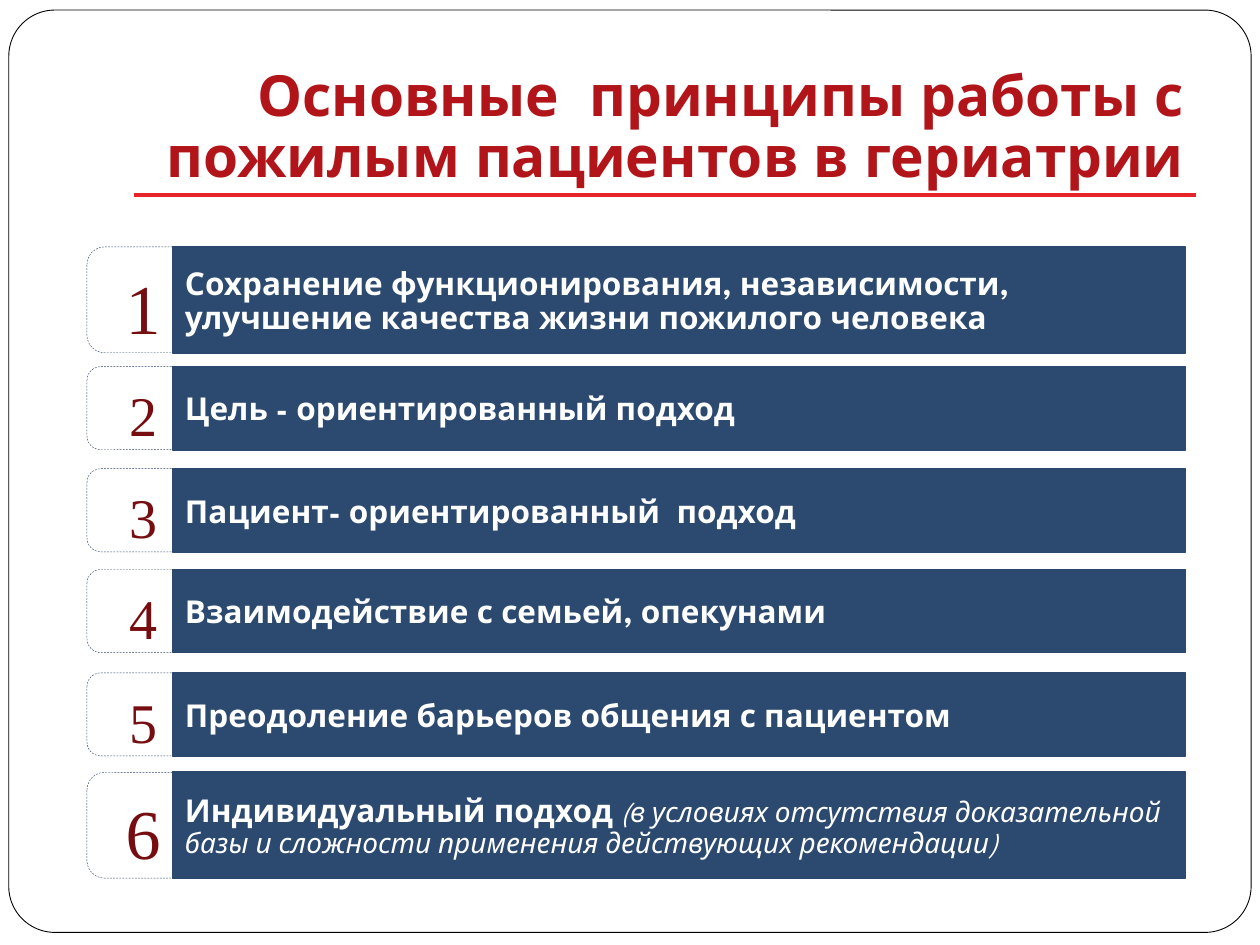
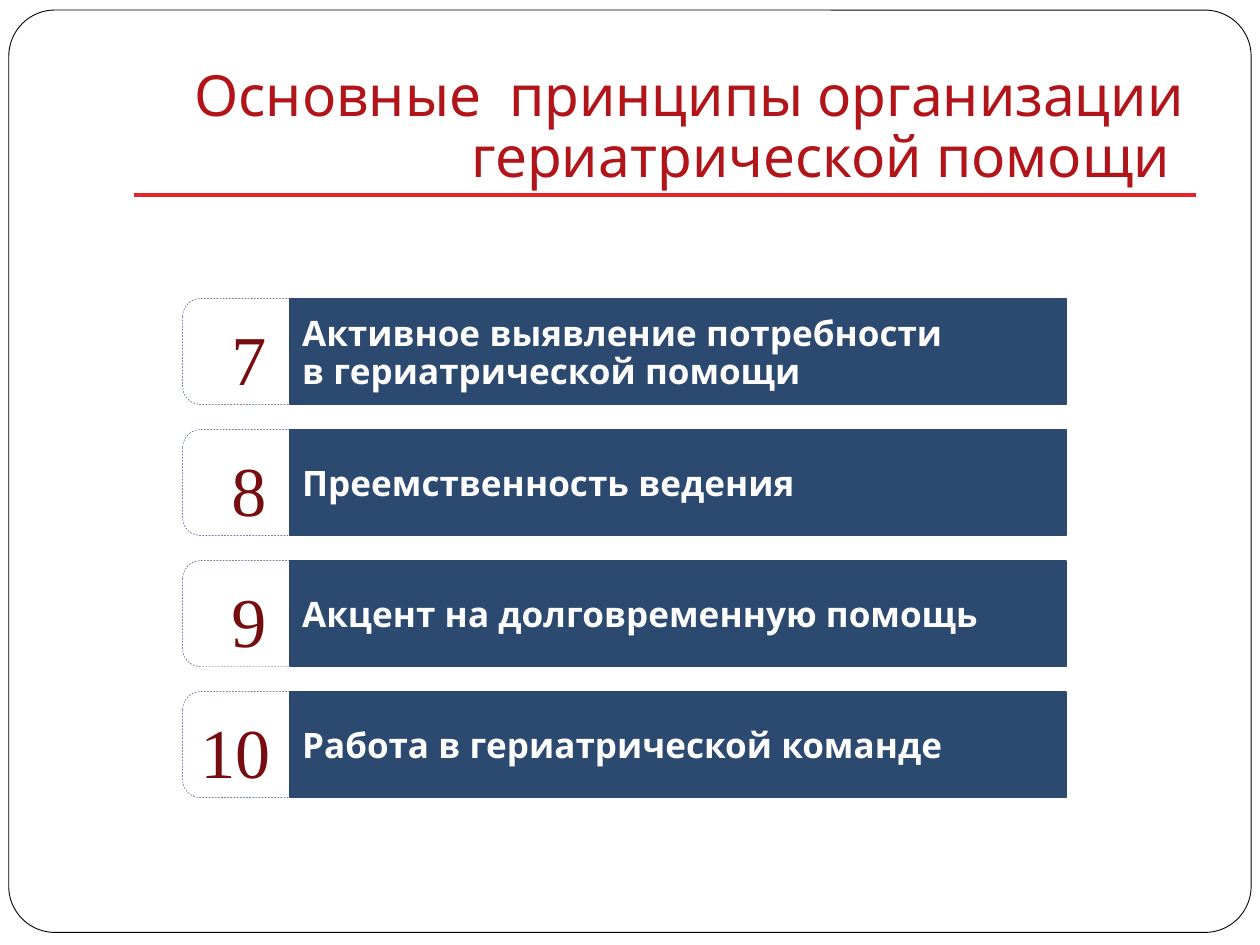
from pptx import Presentation
from pptx.dml.color import RGBColor
from pptx.enum.dml import MSO_LINE
from pptx.enum.shapes import MSO_CONNECTOR, MSO_SHAPE
from pptx.enum.text import MSO_ANCHOR, MSO_AUTO_SIZE, PP_ALIGN
from pptx.oxml.ns import qn
from pptx.util import Inches, Pt
from lxml.etree import SubElement

COLORS = {"white": "FFFFFF", "black": "000000", "red": "E52329",
          "title": "B1151A", "digit": "760E11", "bar": "2C4970", "edge": "2C486E"}
SANS, SERIF = "League Spartan", "Times New Roman"

# Each row: number, top, height, lines; a line is a list of (text, size, bold, italic)
WORK = [
    (1, 1.96, 0.84, [[("Сохранение функционирования, независимости,", 18, True, False)],
                     [("улучшение качества жизни пожилого человека", 18, True, False)]]),
    (2, 2.91, 0.66, [[("Цель - ориентированный подход", 18, True, False)]]),
    (3, 3.72, 0.66, [[("Пациент- ориентированный  подход", 18, True, False)]]),
    (4, 4.52, 0.66, [[("Взаимодействие с семьей, опекунами", 18, True, False)]]),
    (5, 5.34, 0.66, [[("Преодоление барьеров общения с пациентом", 18, True, False)]]),
    (6, 6.13, 0.84, [[("Индивидуальный подход ", 18, True, False),
                      ("(в условиях отсутствия доказательной базы и сложности "
                       "применения действующих рекомендации)", 16, False, True)]]),
]
CARE = [["Активное выявление потребности", "в гериатрической помощи"],
        ["Преемственность ведения"],
        ["Акцент на долговременную помощь"],
        ["Работа в гериатрической команде"]]


def color(name):
    return RGBColor.from_string(COLORS[name])


def add_run(para, text, font, size, tint, bold=False, italic=False):
    run = para.add_run()
    run.text = text
    run.font.name, run.font.size = font, Pt(size)
    run.font.bold, run.font.italic = bold, italic
    run.font.color.rgb = color(tint)


def add_box(slide, kind, left, top, width, height, fill, edge, weight):
    box = slide.shapes.add_shape(kind, Inches(left), Inches(top),
                                 Inches(width), Inches(height))
    box.shadow.inherit = False
    if fill:
        box.fill.solid()
        box.fill.fore_color.rgb = color(fill)
    else:
        box.fill.background()
    box.line.color.rgb = color(edge)
    box.line.width = Pt(weight)
    return box


def set_text(box, inset, align):
    frame = box.text_frame
    frame.word_wrap = True
    frame.vertical_anchor = MSO_ANCHOR.MIDDLE
    frame.margin_top = Inches(inset)
    para = frame.paragraphs[0]
    para.alignment = align
    return para


def add_row(slide, row, left, tab, bar, width):
    """A numbered tab, partly covered by a text bar."""
    number, top, height, lines = row
    box = add_box(slide, MSO_SHAPE.ROUNDED_RECTANGLE, left, top, tab, height,
                  None, "edge", 0.25)
    box.line.dash_style = MSO_LINE.DASH
    para = set_text(box, 0.15, PP_ALIGN.CENTER if number < 10 else PP_ALIGN.LEFT)
    add_run(para, str(number), SERIF, 40 if height > 0.8 else 32, "digit")

    box = add_box(slide, MSO_SHAPE.RECTANGLE, bar, top, width, height,
                  "bar", "edge", 1)
    para = set_text(box, 0.09, PP_ALIGN.LEFT)
    para.line_spacing = 0.9
    for index, line in enumerate(lines):
        if index:
            para.add_line_break()
        for text, size, bold, italic in line:
            add_run(para, text, SANS, size, "white", bold, italic)


def set_layout(layout, slide):
    """Put the frame, the rule and the title place on the shared layout."""
    frame = add_box(slide, MSO_SHAPE.ROUNDED_RECTANGLE, 0.07, 0.08, 9.86, 7.32,
                    "white", "black", 0.5)
    frame.adjustments[0] = 0.05
    rule = slide.shapes.add_connector(MSO_CONNECTOR.STRAIGHT, Inches(9.49),
                                      Inches(1.55), Inches(1.06), Inches(1.55))
    rule.line.color.rgb = color("red")
    rule.line.width = Pt(2.25)
    SubElement(rule.element.spPr, qn("a:effectLst"))
    for index, shape in enumerate((frame, rule)):
        shape.element.xpath(".//p:cNvPr")[0].set("id", str(20 + index))
        layout.shapes.element.insert(2 + index, shape.element)

    title = layout.placeholders[0]
    title.left, title.top = Inches(1), Inches(0.54)
    title.width, title.height = Inches(8.5), Inches(1.02)
    text = title.text_frame
    text.auto_size = MSO_AUTO_SIZE.NONE
    text.vertical_anchor = MSO_ANCHOR.BOTTOM
    text.margin_bottom = Inches(0.05)


def set_title(slide, text, bold):
    para = slide.shapes.title.text_frame.paragraphs[0]
    para.alignment = PP_ALIGN.RIGHT
    para.line_spacing = 0.9
    add_run(para, text, SANS, 32.4, "title", bold)


def main():
    deck = Presentation()
    deck.slide_width, deck.slide_height = Inches(10), Inches(7.5)
    layout = deck.slide_layouts[5]

    # Principles of work with patients
    slide = deck.slides.add_slide(layout)
    set_layout(layout, slide)
    set_title(slide, "Основные  принципы работы с пожилым пациентов в гериатрии", True)
    for row in WORK:
        add_row(slide, row, 0.69, 0.89, 1.37, 8.04)

    # Principles of organising care
    slide = deck.slides.add_slide(layout)
    set_title(slide, "Основные  принципы организации гериатрической помощи ", False)
    for index, texts in enumerate(CARE):
        lines = [[(text, 20, True, False)] for text in texts]
        row = (7 + index, 2.37 + 1.04 * index, 0.84, lines)
        add_row(slide, row, 1.45, 1.05, 2.3, 6.16)

    deck.save("out.pptx")


if __name__ == "__main__":
    main()
